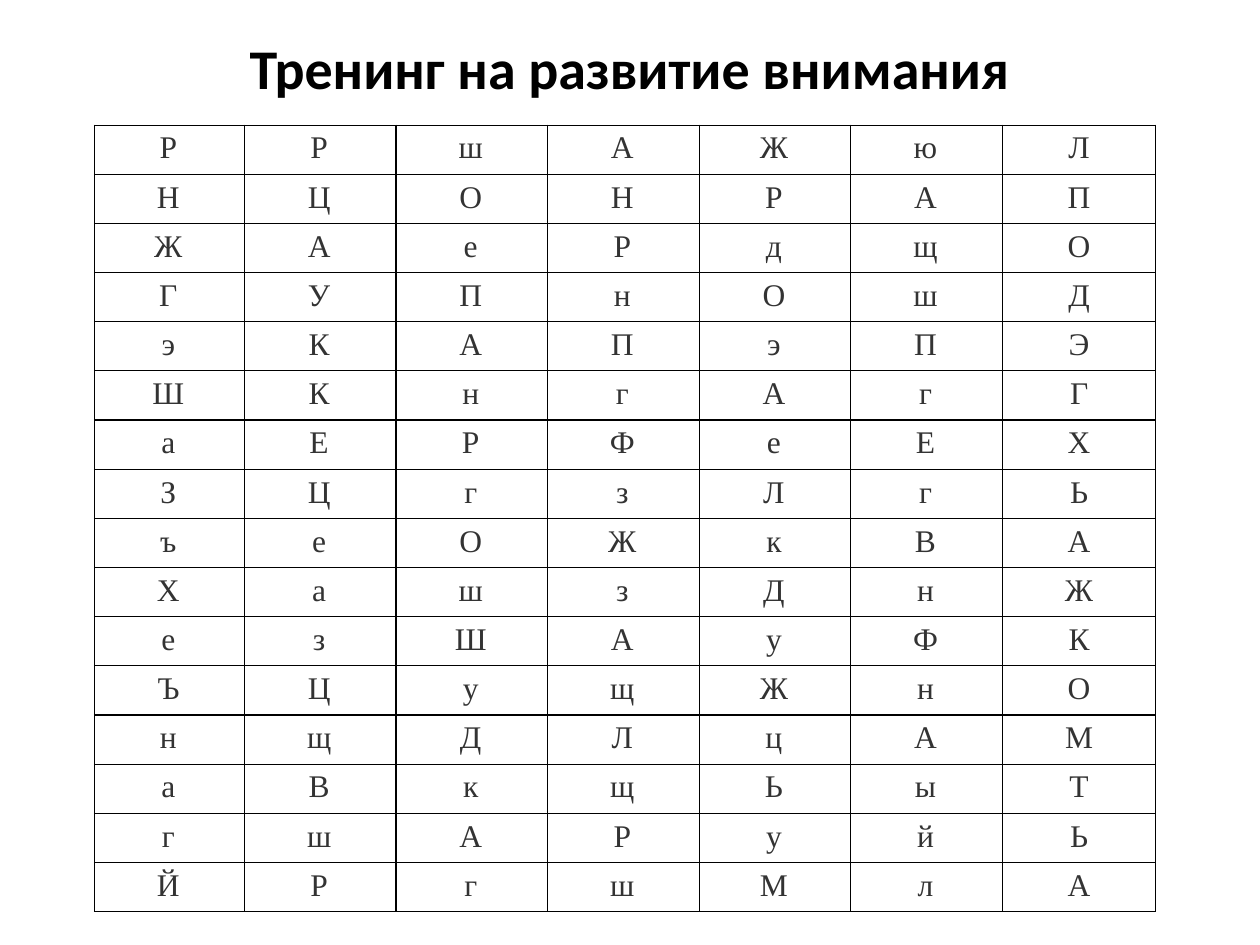
from lxml.etree import SubElement
from pptx import Presentation
from pptx.dml.color import RGBColor
from pptx.enum.text import MSO_ANCHOR as Anchor, PP_ALIGN as Align
from pptx.oxml.ns import qn
from pptx.util import Pt

TITLE = "Тренинг на развитие внимания"
LETTER_ROWS = [
    "РРшАЖюЛ",
    "НЦОНРАП",
    "ЖАеРдщО",
    "ГУПнОшД",
    "эКАПэПЭ",
    "ШКнгАгГ",
    "аЕРФеЕХ",
    "ЗЦгзЛгЬ",
    "ъеОЖкВА",
    "ХашзДнЖ",
    "езШАуФК",
    "ЪЦущЖнО",
    "нщДЛцАМ",
    "аВкщЬыТ",
    "гшАРуйЬ",
    "ЙРгшМлА",
]
BLACK, GREY, WHITE = "000000", "333333", "FFFFFF"
TABLE_LEFT, TABLE_TOP = 54, 71.5
ROW_HEIGHT = 27.25
COLUMN_WIDTHS = [85.7] + [86.65] * 5 + [87.6]
BORDER_WIDTH = 0.75


def color(value):
    return RGBColor.from_string(value)


def write(text_frame, text, font_name, size, text_color, bold=False):
    paragraph = text_frame.paragraphs[0]
    paragraph.alignment = Align.CENTER
    run = paragraph.add_run()
    run.text = text
    run.font.name = font_name
    run.font.size = Pt(size)
    run.font.bold = bold
    run.font.color.rgb = color(text_color)


def add_borders(cell):
    """Line all four sides; the lines must precede the fill in the XML."""
    properties = cell._tc.get_or_add_tcPr()
    for side in ("a:lnL", "a:lnR", "a:lnT", "a:lnB"):
        line = SubElement(properties, qn(side), w=str(Pt(BORDER_WIDTH)))
        fill = SubElement(line, qn("a:solidFill"))
        SubElement(fill, qn("a:srgbClr"), val=BLACK)


def add_title(slide):
    box = slide.shapes.add_textbox(Pt(36), Pt(21.6), Pt(648), Pt(33))
    text_frame = box.text_frame
    text_frame.word_wrap = True
    text_frame.vertical_anchor = Anchor.MIDDLE
    write(text_frame, TITLE, "Calibri", 32, BLACK, bold=True)


def add_letter_table(slide):
    row_count, column_count = len(LETTER_ROWS), len(COLUMN_WIDTHS)
    table = slide.shapes.add_table(
        row_count, column_count, Pt(TABLE_LEFT), Pt(TABLE_TOP),
        Pt(sum(COLUMN_WIDTHS)), Pt(ROW_HEIGHT * row_count)).table
    table.first_row = table.horz_banding = False
    for column, width in zip(table.columns, COLUMN_WIDTHS):
        column.width = Pt(width)
    for row, letters in zip(table.rows, LETTER_ROWS):
        row.height = Pt(ROW_HEIGHT)
        for index, (cell, letter) in enumerate(zip(row.cells, letters)):
            is_last = index == column_count - 1
            cell.margin_left = Pt(5.2)
            cell.margin_right = Pt(5.2 if is_last else 6.5)
            cell.margin_top = cell.margin_bottom = Pt(3.25)
            add_borders(cell)
            cell.fill.solid()
            cell.fill.fore_color.rgb = color(WHITE)
            write(cell.text_frame, letter, "Times New Roman", 18, GREY)


def main():
    presentation = Presentation()
    presentation.slide_width, presentation.slide_height = Pt(720), Pt(540)
    slide = presentation.slides.add_slide(presentation.slide_layouts[6])
    add_title(slide)
    add_letter_table(slide)
    presentation.save("out.pptx")


if __name__ == "__main__":
    main()
